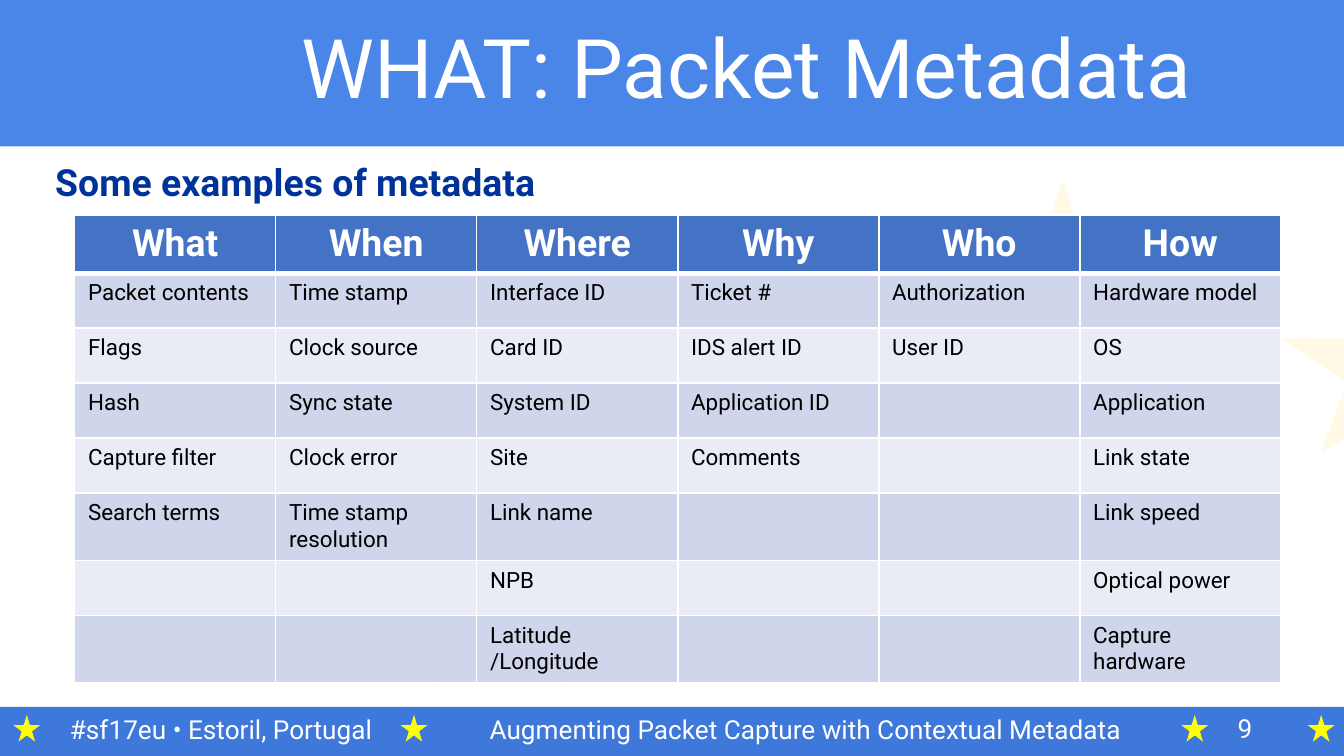
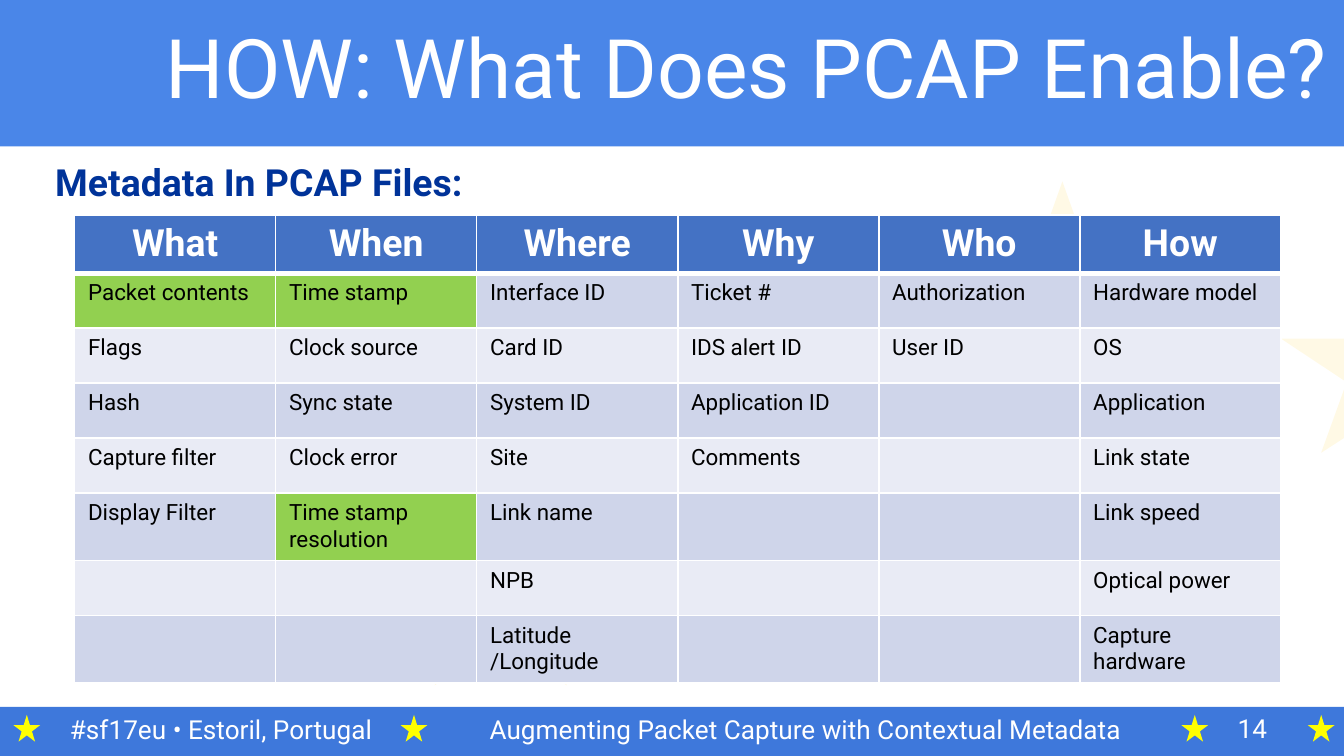
"""Builds two slides that list packet metadata by question."""
from itertools import zip_longest

from lxml.etree import SubElement
from pptx import Presentation
from pptx.dml.color import RGBColor
from pptx.enum.shapes import MSO_SHAPE
from pptx.enum.text import MSO_ANCHOR, PP_ALIGN
from pptx.oxml.ns import qn
from pptx.util import Pt

FONT = "Roboto"
COLORS = {
    "title_band": "4A86E8", "footer_band": "3E78DB", "star": "FFFF00",
    "faint_star": "FFCC01", "heading": "003399", "header": "4472C4",
    "odd_row": "CFD5EA", "even_row": "E9EBF5", "marked": "92D050",
    "white": "FFFFFF", "black": "000000",
}
WIDTH, HEIGHT = 720, 405
EVENT = "#sf17eu • Estoril, Portugal"
TALK = "Augmenting Packet Capture with Contextual Metadata"

METADATA = {
    "What": ["Packet contents", "Flags", "Hash", "Capture filter"],
    "When": ["Time stamp", "Clock source", "Sync state", "Clock error",
             "Time stamp resolution"],
    "Where": ["Interface ID", "Card ID", "System ID", "Site", "Link name",
              "NPB", "Latitude /Longitude"],
    "Why": ["Ticket #", "IDS alert ID", "Application ID", "Comments"],
    "Who": ["Authorization", "User ID"],
    "How": ["Hardware model", "OS", "Application", "Link state", "Link speed",
            "Optical power", "Capture hardware"],
}
SLIDES = [
    {"title": "WHAT: Packet Metadata", "heading": "Some examples of metadata",
     "number": "9", "last_what": "Search terms", "marked": ()},
    {"title": "HOW: What Does PCAP Enable?", "heading": "Metadata In PCAP Files:",
     "number": "14", "last_what": "Display Filter",
     "marked": ("Packet contents", "Time stamp", "Time stamp resolution")},
]

FOOTER_TOP = 378.7
STAR_LEFTS, STAR_TOP, STAR_SIZE = (214.6, 7.2, 632.9, 700.6), 383, 14.4
FAINT_STARS = [(211, 267.8), (337, 143.3), (511.9, 97.2)]
FAINT_SIZE = (114.5, 99.4)
CUT_STAR = [
    [(720, 208.8), (720, 234.7), (707.8, 242.6)],
    [(686.2, 181.4), (720, 181.4), (720, 203.8)],
]
TABLE_LEFT, TABLE_TOP, COLUMN_WIDTH, ROW_HEIGHT = 40, 115.1, 107.7, 29.5
THIN, THICK = 1, 3


def rgb(name):
    return RGBColor.from_string(COLORS[name])


def paint(shape, color, opacity=100):
    shape.shadow.inherit = False
    shape.fill.solid()
    shape.fill.fore_color.rgb = rgb(color)
    shape.line.fill.background()
    if opacity < 100:
        tone = shape.element.spPr.find(f"{qn('a:solidFill')}/{qn('a:srgbClr')}")
        SubElement(tone, qn("a:alpha"), val=str(opacity * 1000))


def add_preset(page, kind, color, left, top, width, height, opacity=100):
    shape = page.shapes.add_shape(kind, Pt(left), Pt(top), Pt(width), Pt(height))
    paint(shape, color, opacity)


def write(frame, text, size, color, bold=False, align=PP_ALIGN.LEFT):
    frame.text = text
    para = frame.paragraphs[0]
    para.alignment = align
    for span in para.runs:
        span.font.name = FONT
        span.font.size = Pt(size)
        span.font.bold = bold
        span.font.color.rgb = rgb(color)


def add_text(page, text, place, size, color="white", **style):
    box = page.shapes.add_textbox(*map(Pt, place))
    box.text_frame.word_wrap = True
    write(box.text_frame, text, size, color, **style)
    return box.text_frame


def add_cut_star(page):
    first, *others = [[(Pt(x), Pt(y)) for x, y in part] for part in CUT_STAR]
    builder = page.shapes.build_freeform(*first[0])
    builder.add_line_segments(first[1:])
    for part in others:
        builder.move_to(*part[0])
        builder.add_line_segments(part[1:])
    paint(builder.convert_to_shape(), "faint_star", 10)


def add_frame(page, number):
    add_preset(page, MSO_SHAPE.RECTANGLE, "title_band", 0, 0, WIDTH, 78.5)
    add_preset(page, MSO_SHAPE.RECTANGLE, "footer_band",
               0, FOOTER_TOP, WIDTH, HEIGHT - FOOTER_TOP)
    for left in STAR_LEFTS:
        add_preset(page, MSO_SHAPE.STAR_5_POINT, "star",
                   left, STAR_TOP, STAR_SIZE, STAR_SIZE)
    add_text(page, EVENT, (28, FOOTER_TOP, 181, 26), 14, align=PP_ALIGN.CENTER)
    add_text(page, TALK, (236, FOOTER_TOP, 391, 24.5), 14, align=PP_ALIGN.CENTER)
    add_text(page, number, (656, 378, 35.3, 24.5), 14)
    for left, top in FAINT_STARS:
        add_preset(page, MSO_SHAPE.STAR_5_POINT, "faint_star",
                   left, top, *FAINT_SIZE, opacity=10)
    add_cut_star(page)


def set_borders(cell, top, bottom):
    properties = cell._tc.get_or_add_tcPr()
    for side, width in (("L", THIN), ("R", THIN), ("T", top), ("B", bottom)):
        line = SubElement(properties, qn(f"a:ln{side}"), w=str(Pt(width)))
        fill = SubElement(line, qn("a:solidFill"))
        SubElement(fill, qn("a:srgbClr"), val=COLORS["white"])


def add_metadata_table(page, last_what, marked):
    columns = {**METADATA, "What": METADATA["What"] + [last_what]}
    rows = [tuple(columns), *zip_longest(*columns.values(), fillvalue="")]
    table = page.shapes.add_table(
        len(rows), len(columns), Pt(TABLE_LEFT), Pt(TABLE_TOP),
        Pt(COLUMN_WIDTH * len(columns)), Pt(ROW_HEIGHT * len(rows))).table
    table.horz_banding = False
    for index, texts in enumerate(rows):
        table.rows[index].height = Pt(ROW_HEIGHT)
        for cell, text in zip(table.rows[index].cells, texts):
            set_borders(cell, THICK if index == 1 else THIN,
                        THICK if index == 0 else THIN)
            cell.fill.solid()
            if index == 0:
                color = "header"
                write(cell.text_frame, text, 20, "white", True, PP_ALIGN.CENTER)
            else:
                band = "odd_row" if index % 2 else "even_row"
                color = "marked" if text in marked else band
                write(cell.text_frame, text, 12, "black")
            cell.fill.fore_color.rgb = rgb(color)


def main():
    deck = Presentation()
    deck.slide_width, deck.slide_height = Pt(WIDTH), Pt(HEIGHT)
    for content in SLIDES:
        page = deck.slides.add_slide(deck.slide_layouts[6])
        add_frame(page, content["number"])
        title = add_text(page, content["title"], (80, 0, 640.5, 77), 44,
                         align=PP_ALIGN.CENTER)
        title.vertical_anchor = MSO_ANCHOR.MIDDLE
        title.paragraphs[0].line_spacing = 0.9
        add_text(page, content["heading"], (22.5, 81.5, 680, 31.5), 20,
                 "heading", bold=True)
        add_metadata_table(page, content["last_what"], content["marked"])
    deck.save("out.pptx")


if __name__ == "__main__":
    main()
